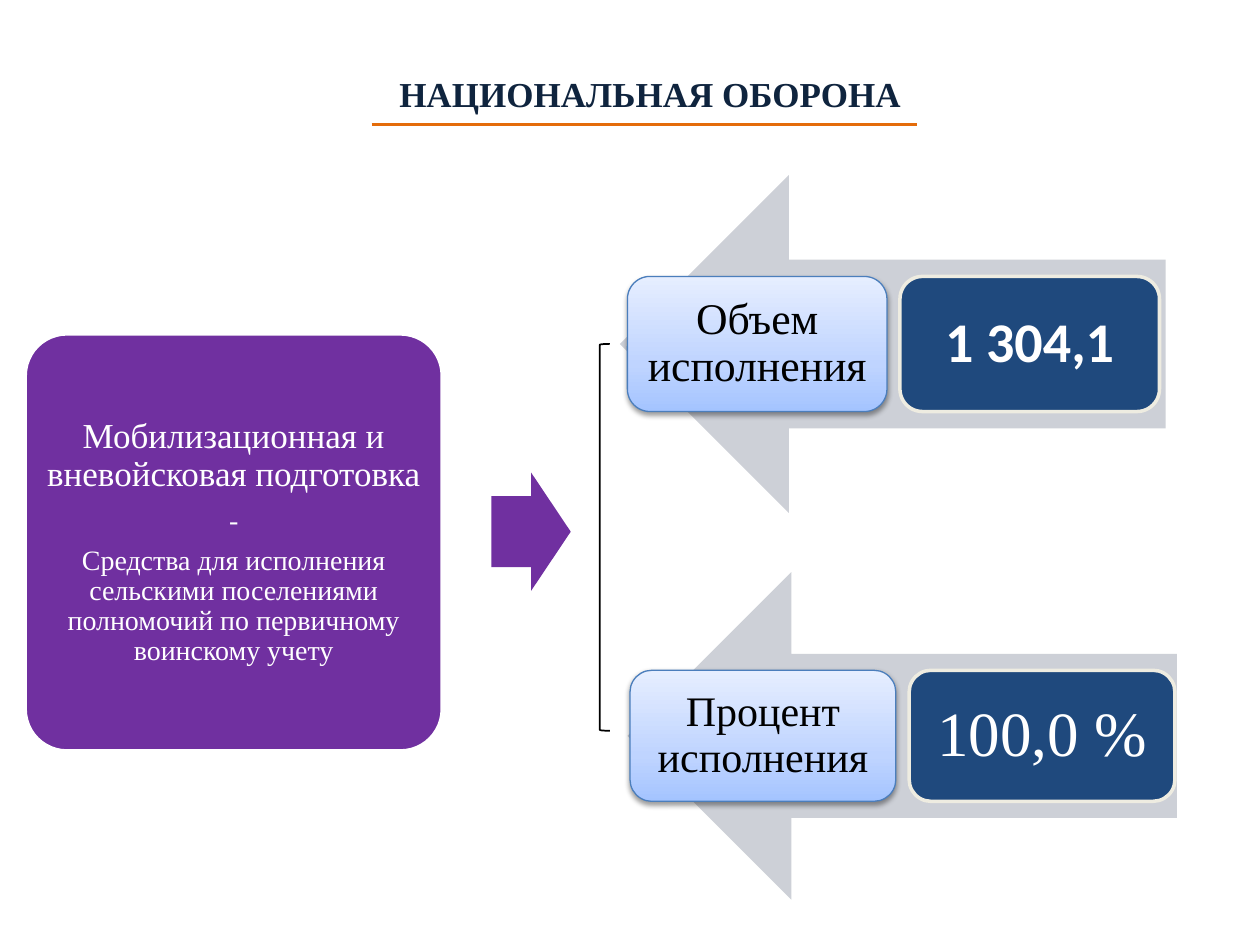
from dataclasses import dataclass

from lxml.etree import SubElement
from pptx import Presentation
from pptx.dml.color import RGBColor
from pptx.enum.shapes import MSO_CONNECTOR, MSO_SHAPE
from pptx.enum.text import MSO_ANCHOR, PP_ALIGN
from pptx.oxml.ns import qn
from pptx.shapes.autoshape import Shape
from pptx.slide import Slide
from pptx.util import Inches, Pt


@dataclass(frozen=True)
class Theme:
    serif: str = "Times New Roman"
    sans: str = "Calibri"
    heading: str = "0F243E"
    rule: str = "E46C0A"
    topic: str = "7030A0"
    arrow: str = "CDD0D7"
    label_line: str = "4B7EBC"
    label_stops: tuple = ((0, "A4C4FF"), (0.35, "BFD4FF"), (1, "E6EEFF"))
    value: str = "1F497D"
    value_line: str = "EEECE1"
    white: str = "FFFFFF"
    black: str = "000000"
    heading_size: int = 20
    detail_size: int = 16


@dataclass(frozen=True)
class Area:
    left: float
    top: float
    width: float
    height: float


@dataclass(frozen=True)
class Outcome:
    label: str
    label_size: int
    value: str
    value_size: int
    value_font: str
    value_bold: bool
    arrow: Area
    card_left: float
    card_width: float


THEME = Theme()
OUTCOMES = (
    Outcome("Объем исполнения", 25, "1 304,1", 32, THEME.sans, True,
            Area(4.92, 1.39, 4.33, 2.68), 4.98, 2.06),
    Outcome("Процент исполнения", 24, "100,0 %", 36, THEME.serif, False,
            Area(4.98, 4.54, 4.36, 2.6), 5, 2.11),
)


def color(value: str) -> RGBColor:
    return RGBColor.from_string(value)


def write_text(shape: Shape, text: str, *, size: int, fill: str,
               font: str = THEME.serif, bold: bool = False,
               inset: float = 0.05, append: bool = False,
               line_spacing: float = 0.9, after: float = 0.35) -> None:
    frame = shape.text_frame
    frame.word_wrap = True
    frame.vertical_anchor = MSO_ANCHOR.MIDDLE
    frame.margin_left = frame.margin_right = Inches(inset)
    frame.margin_top = frame.margin_bottom = Inches(inset)
    para = frame.add_paragraph() if append else frame.paragraphs[0]
    para.alignment = PP_ALIGN.CENTER
    para.line_spacing = line_spacing
    para.space_after = Pt(size * after)
    span = para.add_run()
    span.text = text
    span.font.name = font
    span.font.size = Pt(size)
    span.font.bold = bold
    span.font.color.rgb = color(fill)


def add_box(page: Slide, kind: MSO_SHAPE, area: Area, fill: str | None = None,
            line: str | None = None, line_width: float = 2) -> Shape:
    box = page.shapes.add_shape(kind, Inches(area.left), Inches(area.top),
                                Inches(area.width), Inches(area.height))
    box.shadow.inherit = False
    if fill:
        box.fill.solid()
        box.fill.fore_color.rgb = color(fill)
    else:
        box.fill.background()
    if line:
        box.line.color.rgb = color(line)
        box.line.width = Pt(line_width)
    else:
        box.line.fill.background()
    return box


def style_label(box: Shape) -> None:
    box.fill.gradient()
    box.fill.gradient_angle = 90
    properties = box._element.spPr
    stops = properties.find(qn("a:gradFill")).find(qn("a:gsLst"))
    for stop in list(stops):
        stops.remove(stop)
    for position, value in THEME.label_stops:
        stop = SubElement(stops, qn("a:gs"), pos=str(round(position * 100000)))
        SubElement(stop, qn("a:srgbClr"), val=value)
    shadow = SubElement(properties.find(qn("a:effectLst")), qn("a:outerShdw"),
                        blurRad=str(Pt(3.1)), dist=str(Pt(1.6)),
                        dir="5400000", rotWithShape="0")
    shade = SubElement(shadow, qn("a:srgbClr"), val=THEME.black)
    SubElement(shade, qn("a:alpha"), val="38000")


def add_title(page: Slide) -> None:
    title = page.shapes.title
    title.left, title.top = Inches(2.01), Inches(0.52)
    title.width, title.height = Inches(6.3), Inches(0.44)
    write_text(title, "НАЦИОНАЛЬНАЯ ОБОРОНА", size=THEME.heading_size,
               fill=THEME.heading, bold=True, line_spacing=1, after=0)
    rule = page.shapes.add_connector(MSO_CONNECTOR.STRAIGHT, Inches(2.95),
                                     Inches(0.99), Inches(7.28), Inches(0.99))
    rule.line.color.rgb = color(THEME.rule)
    rule.line.width = Pt(1.5)
    SubElement(rule._element.spPr, qn("a:effectLst"))


def add_topic(page: Slide) -> None:
    topic = add_box(page, MSO_SHAPE.ROUNDED_RECTANGLE,
                    Area(0.2, 2.65, 3.31, 3.31), THEME.topic, THEME.white)
    topic.adjustments[0] = 0.1
    write_text(topic, "Мобилизационная и вневойсковая подготовка",
               size=THEME.heading_size, fill=THEME.white, inset=0.01)
    for text in ("-", "Средства для исполнения сельскими поселениями "
                      "полномочий по первичному воинскому учету"):
        write_text(topic, text, size=THEME.detail_size, fill=THEME.white,
                   inset=0.01, append=True)
    pointer = add_box(page, MSO_SHAPE.RIGHT_ARROW,
                      Area(3.9, 3.75, 0.63, 0.94), THEME.topic)
    pointer.adjustments[0] = 0.6


def add_outcome(page: Slide, outcome: Outcome) -> None:
    arrow = add_box(page, MSO_SHAPE.RIGHT_ARROW, outcome.arrow, THEME.arrow)
    arrow.rotation = 180
    top = outcome.arrow.top + outcome.arrow.height * 0.3
    height = outcome.arrow.height * 0.4
    width = outcome.card_width
    label = add_box(page, MSO_SHAPE.ROUNDED_RECTANGLE,
                    Area(outcome.card_left, top, width, height),
                    line=THEME.label_line, line_width=0.75)
    style_label(label)
    write_text(label, outcome.label, size=outcome.label_size, fill=THEME.black)
    value = add_box(page, MSO_SHAPE.ROUNDED_RECTANGLE,
                    Area(outcome.card_left + width * 1.05, top, width, height),
                    THEME.value, THEME.value_line)
    write_text(value, outcome.value, size=outcome.value_size, fill=THEME.white,
               font=outcome.value_font, bold=outcome.value_bold)


def main() -> None:
    deck = Presentation()
    deck.slide_width, deck.slide_height = Inches(10), Inches(7.5)
    page = deck.slides.add_slide(deck.slide_layouts[5])
    add_title(page)
    add_topic(page)
    for outcome in OUTCOMES:
        add_outcome(page, outcome)
    add_box(page, MSO_SHAPE.LEFT_BRACKET, Area(4.76, 2.73, 0.08, 3.07),
            line=THEME.black, line_width=1)
    deck.save("out.pptx")


if __name__ == "__main__":
    main()
